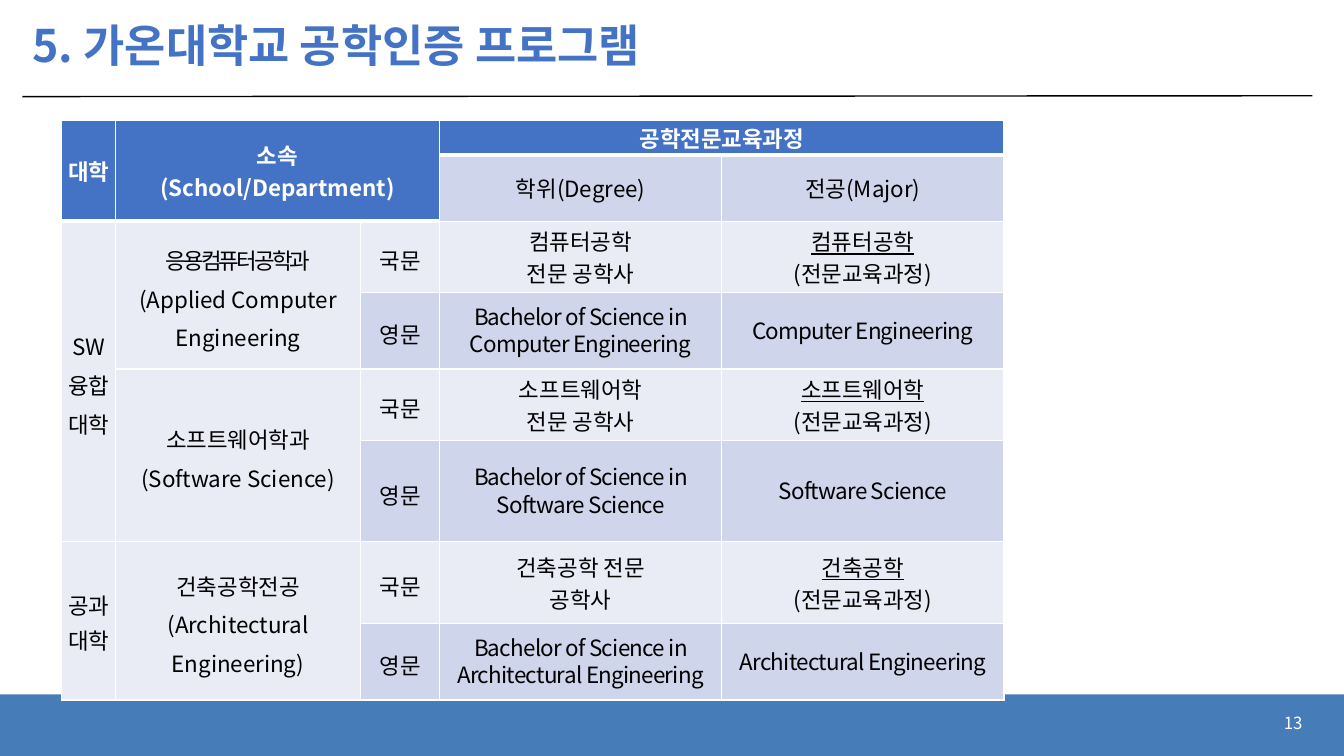
import pptx
import pptx.util
import pptx.dml.color
import pptx.enum.shapes
import pptx.enum.text
import pptx.oxml.ns
import lxml.etree
from dataclasses import dataclass
from typing import Any

Pt = pptx.util.Pt
Align = pptx.enum.text.PP_ALIGN
MIDDLE = pptx.enum.text.MSO_ANCHOR.MIDDLE


@dataclass(frozen=True)
class Theme:
    font: str = "Noto Sans CJK KR"
    blue: str = "4472C4"
    bar: str = "467DB9"
    light: str = "E9EBF5"
    mid: str = "CFD5EA"
    white: str = "FFFFFF"
    black: str = "000000"
    title: float = 32
    body: float = 16
    small: float = 12


THEME = Theme()


@dataclass(frozen=True)
class Style:
    fill: str
    ink: str = THEME.black
    bold: bool = False
    lead: float = 1.0
    inset: float = 0.72
    base: float = 1


@dataclass(frozen=True)
class Line:
    text: str
    track: float = 0
    under: bool = False


@dataclass(frozen=True)
class Cell:
    row: int
    col: int
    lines: list[Line]
    style: Style
    rows: int = 1
    cols: int = 1


@dataclass(frozen=True)
class School:
    name: list[Line]
    degree: list[Line]
    major: str
    field: str


HEAD = Style(THEME.blue, THEME.white, True, base=3)
SUB = Style(THEME.mid)
SIDE = Style(THEME.light, lead=1.2)
TIGHT = Style(THEME.light, lead=1.1)
KOREAN = Style(THEME.light)
TAG = Style(THEME.mid, lead=1.2)
ENGLISH = Style(THEME.mid, lead=0.85, inset=1.44)

WIDTHS = [38.6, 175, 56.4, 201.6, 201.6]
HEIGHTS = [24, 24, 51, 54.5, 51, 72.5, 58.5, 54.5]


def plain(*texts: str) -> list[Line]:
    return [Line(text) for text in texts]


SCHOOLS = [
    School([Line("응용컴퓨터공학과", -2), Line("(Applied Computer Engineering")],
           plain("컴퓨터공학", "전문 공학사"), "컴퓨터공학", "Computer Engineering"),
    School(plain("소프트웨어학과", "(Software Science)"),
           plain("소프트웨어학", "전문 공학사"), "소프트웨어학", "Software Science"),
    School(plain("건축공학전공", "(Architectural", "Engineering)"),
           plain("건축공학 전문", "공학사"), "건축공학", "Architectural Engineering"),
]

HEADS = [
    Cell(0, 0, plain("대학"), HEAD, rows=2),
    Cell(0, 1, plain("소속", "(School/Department)"), HEAD, rows=2, cols=2),
    Cell(0, 3, plain("공학전문교육과정"), HEAD, cols=2),
    Cell(1, 3, plain("학위(Degree)"), SUB),
    Cell(1, 4, plain("전공(Major)"), SUB),
    Cell(2, 0, plain("SW", "융합", "대학"), SIDE, rows=4),
    Cell(6, 0, plain("공과", "대학"), TIGHT, rows=2),
]


def school_cells(row: int, school: School) -> list[Cell]:
    return [
        Cell(row, 1, school.name, SIDE, rows=2),
        Cell(row, 2, plain("국문"), SIDE),
        Cell(row, 3, school.degree, KOREAN),
        Cell(row, 4, [Line(school.major, under=True), Line("(전문교육과정)")], KOREAN),
        Cell(row + 1, 2, plain("영문"), TAG),
        Cell(row + 1, 3, [Line(f"Bachelor of Science in {school.field}", -0.5)], ENGLISH),
        Cell(row + 1, 4, [Line(school.field, -0.5)], ENGLISH),
    ]


def tint(code: str) -> pptx.dml.color.RGBColor:
    return pptx.dml.color.RGBColor.from_string(code)


def put(item: Any, values: dict[str, Any]) -> None:
    for name, value in values.items():
        setattr(item, name, value)


def node(parent: Any, tag: str, **marks: str) -> Any:
    return lxml.etree.SubElement(parent, pptx.oxml.ns.qn(tag), marks)


def write(frame: Any, lines: list[Line], size: float, ink: str, bold: bool,
          align: Any, lead: float) -> None:
    for spot, line in enumerate(lines):
        para = frame.add_paragraph() if spot else frame.paragraphs[0]
        put(para, {"alignment": align, "line_spacing": lead})
        run = para.add_run()
        run.text = line.text
        put(run.font, {"name": THEME.font, "size": Pt(size),
                       "bold": bold, "underline": line.under})
        run.font.color.rgb = tint(ink)
        props = run._r.get_or_add_rPr()
        node(props, "a:ea", typeface=THEME.font)
        if line.track:
            props.set("spc", str(round(line.track * 100)))


def edge(cell: Any, base: float) -> None:
    props = cell._tc.get_or_add_tcPr()
    for spot, side in enumerate("LRTB"):
        width = base if side == "B" else 1
        line = node(props, f"a:ln{side}", w=str(Pt(width)))
        node(node(line, "a:solidFill"), "a:srgbClr", val=THEME.white)
        props.insert(spot, line)


def draw_cell(table: Any, item: Cell) -> None:
    last = item.row + item.rows - 1
    end = item.col + item.cols - 1
    first = table.cell(item.row, item.col)
    if (last, end) != (item.row, item.col):
        first.merge(table.cell(last, end))
    style = item.style
    sides = ("left", "right", "top", "bottom")
    for row in range(item.row, last + 1):
        for col in range(item.col, end + 1):
            cell = table.cell(row, col)
            put(cell, {f"margin_{side}": Pt(style.inset) for side in sides})
            cell.vertical_anchor = MIDDLE
            cell.fill.solid()
            cell.fill.fore_color.rgb = tint(style.fill)
            edge(cell, style.base)
    write(first.text_frame, item.lines, THEME.body, style.ink, style.bold,
          Align.CENTER, style.lead)


def draw_table(slide: Any) -> None:
    table = slide.shapes.add_table(len(HEIGHTS), len(WIDTHS), Pt(44), Pt(86),
                                   Pt(sum(WIDTHS)), Pt(sum(HEIGHTS))).table
    put(table, {"first_row": False, "horz_banding": False})
    for col, width in zip(table.columns, WIDTHS):
        col.width = Pt(width)
    for row, height in zip(table.rows, HEIGHTS):
        row.height = Pt(height)
    cells = HEADS + [cell for spot, school in enumerate(SCHOOLS)
                     for cell in school_cells(2 + 2 * spot, school)]
    for cell in cells:
        draw_cell(table, cell)


def draw_frame(slide: Any) -> None:
    bar = slide.shapes.add_shape(pptx.enum.shapes.MSO_SHAPE.RECTANGLE,
                                 Pt(0), Pt(496), Pt(960), Pt(44))
    bar.shadow.inherit = False
    bar.fill.solid()
    bar.fill.fore_color.rgb = tint(THEME.bar)
    bar.line.fill.background()
    rule = slide.shapes.add_connector(pptx.enum.shapes.MSO_CONNECTOR.STRAIGHT,
                                      Pt(16), Pt(69), Pt(937.5), Pt(68.4))
    rule.line.width = Pt(1)
    rule.line.color.rgb = tint(THEME.black)
    node(rule._element.spPr, "a:effectLst")


def draw_text(slide: Any) -> None:
    title = slide.shapes.title
    put(title, {"left": Pt(16), "top": Pt(7), "width": Pt(922), "height": Pt(54)})
    page = slide.shapes.add_textbox(Pt(721.5), Pt(502), Pt(216), Pt(29))
    for shape in (title, page):
        put(shape.text_frame, {"word_wrap": True, "vertical_anchor": MIDDLE,
                               "auto_size": pptx.enum.text.MSO_AUTO_SIZE.NONE})
    write(title.text_frame, plain("5. 가온대학교 공학인증 프로그램"), THEME.title,
          THEME.blue, True, Align.LEFT, 0.9)
    write(page.text_frame, plain("13"), THEME.small, THEME.white, False,
          Align.RIGHT, 1.0)


def main() -> None:
    deck = pptx.Presentation()
    put(deck, {"slide_width": Pt(960), "slide_height": Pt(540)})
    slide = deck.slides.add_slide(deck.slide_layouts[5])
    draw_frame(slide)
    draw_text(slide)
    draw_table(slide)
    deck.save("out.pptx")


if __name__ == "__main__":
    main()
